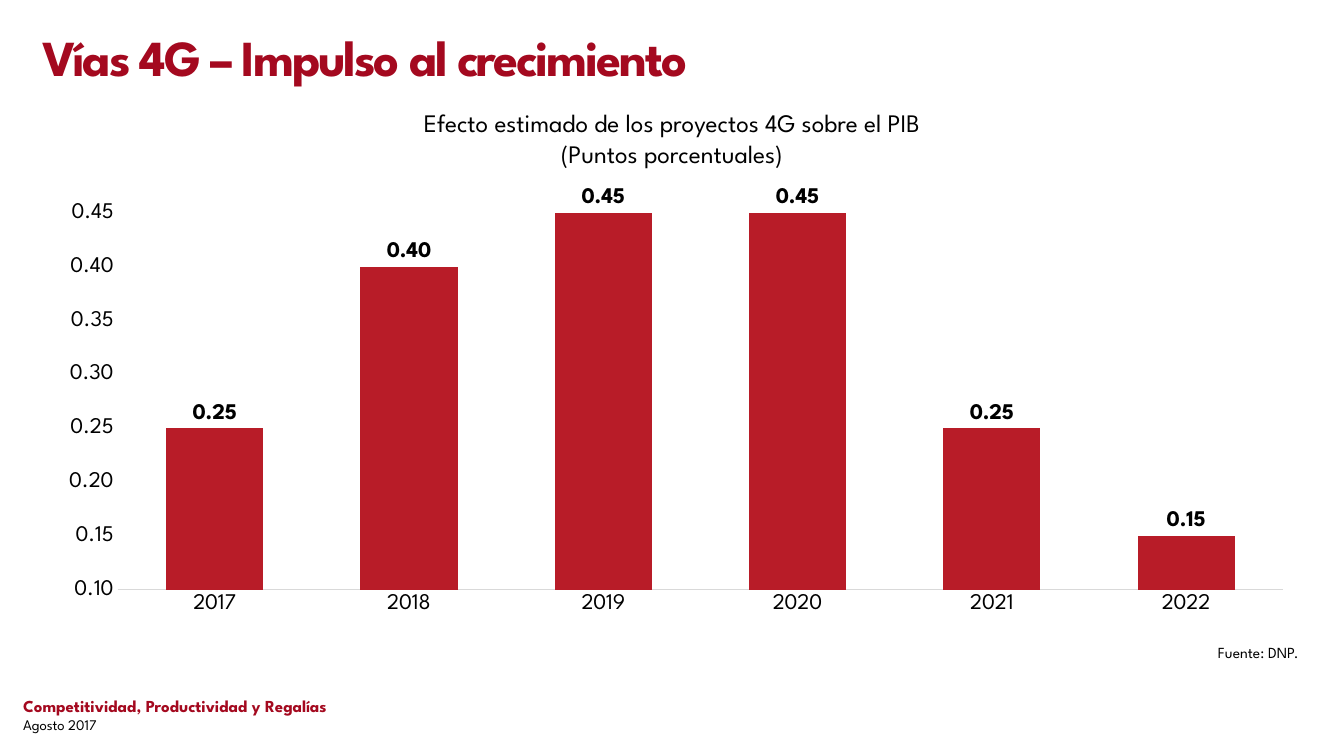
from dataclasses import dataclass

from lxml import etree
from pptx import Presentation
from pptx import util as u
from pptx.chart.data import CategoryChartData
from pptx.dml.color import RGBColor
from pptx.enum import chart as charts, text
from pptx.oxml.ns import qn


@dataclass(frozen=True)
class Theme:
    font: str = "League Spartan"
    crimson: str = "A4091F"
    bar: str = "B81C28"
    ink: str = "000000"
    rule: str = "D9D9D9"
    title: float = 36
    subtitle: float = 18
    chart: float = 16
    footer: float = 12
    source: float = 11
    date: float = 10.5


THEME = Theme()
WIDTH, HEIGHT = u.Inches(13.33), u.Inches(7.5)
COLUMNS = ROWS = 100
EFFECT_ON_GDP = {"2017": 0.25, "2018": 0.40, "2019": 0.45,
                 "2020": 0.45, "2021": 0.25, "2022": 0.15}


def cells(column, row, columns, rows):
    """Turn a grid area into left, top, width and height."""
    return (int(WIDTH * column / COLUMNS), int(HEIGHT * row / ROWS),
            int(WIDTH * columns / COLUMNS), int(HEIGHT * rows / ROWS))


def style(font, size, color=THEME.ink, bold=False):
    font.name, font.size, font.bold = THEME.font, u.Pt(size), bold
    font.color.rgb = RGBColor.from_string(color)


def add_text(page, area, lines, align=text.PP_ALIGN.LEFT, inset=0.05):
    """Write lines of (words, size, colour, bold), one paragraph each."""
    box = page.shapes.add_textbox(*area)
    frame = box.text_frame
    frame.word_wrap = True
    frame.margin_top = frame.margin_bottom = u.Inches(inset)
    for index, (words, *look) in enumerate(lines):
        para = frame.add_paragraph() if index else frame.paragraphs[0]
        para.alignment = align
        span = para.add_run()
        span.text = words
        style(span.font, *look)
    return box


def add_title(page, area):
    box = add_text(page, area, [
        ("Vías 4G – Impulso al crecimiento", THEME.title, THEME.crimson, True)])
    span = box.text_frame.paragraphs[0].runs[0]
    span.font._element.set("spc", "-150")


def add_subtitle(page, area):
    add_text(page, area, [
        ("Efecto estimado de los proyectos 4G sobre el PIB", THEME.subtitle),
        ("(Puntos porcentuales)", THEME.subtitle),
    ], text.PP_ALIGN.CENTER)


def add_source(page, area):
    add_text(page, area, [("Fuente: DNP. ", THEME.source)], text.PP_ALIGN.RIGHT)


def add_footer(page, area):
    add_text(page, area, [
        ("Competitividad, Productividad y Regalías",
         THEME.footer, THEME.crimson, True),
        ("Agosto 2017", THEME.date),
    ], inset=0.1)


def place_plot(chart, **shares):
    """Fix the inner plot area as shares of the chart's size."""
    plot_area = chart._chartSpace.chart.plotArea
    for layout in plot_area.findall(qn("c:layout")):
        plot_area.remove(layout)
    layout = etree.Element(qn("c:layout"))
    manual = etree.SubElement(layout, qn("c:manualLayout"))
    settings = {"layoutTarget": "inner", "xMode": "edge", "yMode": "edge", **shares}
    for name, value in settings.items():
        etree.SubElement(manual, qn(f"c:{name}")).set("val", str(value))
    plot_area.insert(0, layout)


def add_growth_chart(page, area):
    data = CategoryChartData(number_format="0.00")
    data.categories = list(EFFECT_ON_GDP)
    data.add_series("Series 1", list(EFFECT_ON_GDP.values()))
    chart = page.shapes.add_chart(
        charts.XL_CHART_TYPE.COLUMN_CLUSTERED, *area, data).chart
    chart.has_title = chart.has_legend = False
    style(chart.font, THEME.footer)
    place_plot(chart, x=0.059, y=0.036, w=0.915, h=0.878)

    for axis in (chart.category_axis, chart.value_axis):
        axis.has_major_gridlines = False
        axis.major_tick_mark = axis.minor_tick_mark = charts.XL_TICK_MARK.NONE
        style(axis.tick_labels.font, THEME.chart)
    line = chart.category_axis.format.line
    line.color.rgb = RGBColor.from_string(THEME.rule)
    line.width = u.Pt(0.75)
    values = chart.value_axis
    values.format.line.fill.background()
    values.minimum_scale, values.maximum_scale, values.major_unit = 0.1, 0.46, 0.05
    values.tick_labels.number_format = "0.00"
    values.tick_labels.number_format_is_linked = False

    plot = chart.plots[0]
    plot.gap_width, plot.overlap, plot.vary_by_categories = 100, -27, False
    series = plot.series[0]
    series.invert_if_negative = False
    series.format.fill.solid()
    series.format.fill.fore_color.rgb = RGBColor.from_string(THEME.bar)
    labels = series.data_labels
    labels.show_value = True
    labels.number_format, labels.number_format_is_linked = "#,##0.00", False
    labels.position = charts.XL_LABEL_POSITION.OUTSIDE_END
    style(labels.font, THEME.chart, bold=True)


def add_growth_slide(deck):
    page = deck.slides.add_slide(deck.slide_layouts[6])
    add_footer(page, cells(0.98, 90.67, 68.63, 7.33))
    add_title(page, cells(2.4, 2.8, 95.25, 8.13))
    add_source(page, cells(60.38, 84.4, 37.28, 3.87))
    add_subtitle(page, cells(0, 13.6, 100, 9.47))
    add_growth_chart(page, cells(3.15, 24.67, 94.8, 58.4))


def main():
    deck = Presentation()
    deck.slide_width, deck.slide_height = WIDTH, HEIGHT
    add_growth_slide(deck)
    deck.save("out.pptx")


if __name__ == "__main__":
    main()
